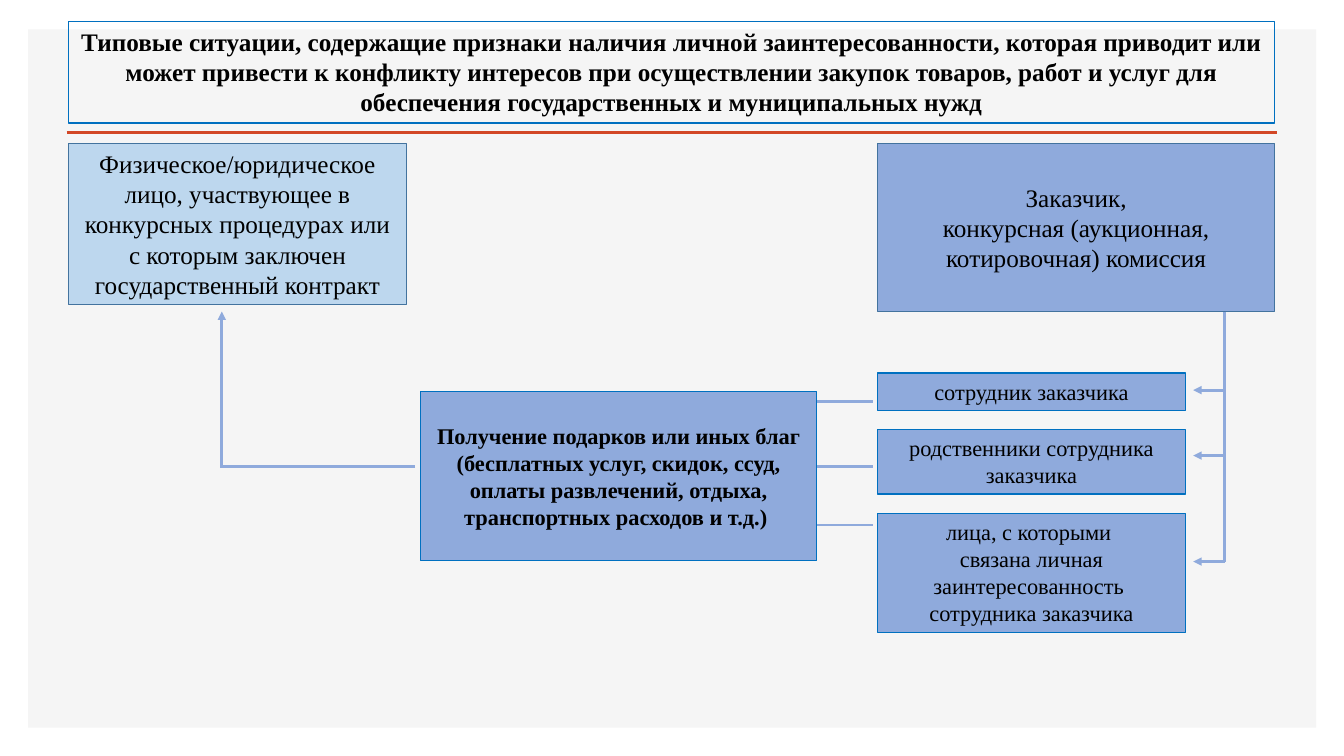
from dataclasses import dataclass
from typing import NamedTuple

from pptx import Presentation
from pptx.dml.color import RGBColor
from pptx.enum import shapes, text
from pptx.oxml import ns, xmlchemy
from pptx.util import Cm, Pt


@dataclass(frozen=True)
class Theme:
    font: str = "Times New Roman"
    heading: int = 18
    body: int = 16
    ink: str = "000000"
    panel: str = "F5F5F5"
    rule: str = "D24726"
    blue: str = "8FAADC"
    pale: str = "BDD7EE"
    edge: str = "0070C0"
    dark_edge: str = "43739E"


class Box(NamedTuple):
    """Left, top, width and height in centimetres."""
    left: float
    top: float
    width: float
    height: float

    @property
    def right(self):
        return self.left + self.width

    @property
    def bottom(self):
        return self.top + self.height

    def lengths(self):
        return [Cm(value) for value in self]


THEME = Theme()
TITLE = ("Типовые ситуации, содержащие признаки наличия личной заинтересованности, "
         "которая приводит или может привести к конфликту интересов при осуществлении "
         "закупок товаров, работ и услуг для обеспечения государственных и муниципальных нужд")
PARTICIPANT = ("Физическое/юридическое лицо, участвующее в конкурсных процедурах "
               "или с которым заключен государственный контракт")
CUSTOMER = "Заказчик,\nконкурсная (аукционная, котировочная) комиссия"
GIFTS = ("Получение подарков или иных благ (бесплатных услуг, скидок, ссуд, "
         "оплаты развлечений, отдыха, транспортных расходов и т.д.) ")
# Wording, box height, distance of the arrow from the top of the box
PEOPLE = [
    ("сотрудник заказчика", 0.94, 0.43),
    ("родственники сотрудника заказчика", 1.63, 0.66),
    ("лица, с которыми \nсвязана личная\nзаинтересованность \nсотрудника заказчика", 3.0, 1.22),
]
PEOPLE_GAP = 0.48
LINK_OFFSETS = (0.25, 1.9, 3.37)


def write(shape, wording, size, bold=False, anchor=text.MSO_ANCHOR.MIDDLE):
    frame = shape.text_frame
    frame.word_wrap = True
    frame.auto_size = text.MSO_AUTO_SIZE.NONE
    frame.vertical_anchor = anchor
    frame.text = wording
    for para in frame.paragraphs:
        para.alignment = text.PP_ALIGN.CENTER
        para.font.name = THEME.font
        para.font.size = Pt(size)
        para.font.bold = bold
        para.font.color.rgb = RGBColor.from_string(THEME.ink)


def outline(shape, color, width):
    shape.line.color.rgb = RGBColor.from_string(color)
    shape.line.width = Pt(width)


def add_block(page, box, fill, edge=None, width=0.75):
    block = page.shapes.add_shape(shapes.MSO_SHAPE.RECTANGLE, *box.lengths())
    block.shadow.inherit = False
    block.fill.solid()
    block.fill.fore_color.rgb = RGBColor.from_string(fill)
    if edge:
        outline(block, edge, width)
    else:
        block.line.fill.background()
    return block


def add_line(page, start, end, color=THEME.blue, arrow=False):
    line = page.shapes.add_connector(
        shapes.MSO_CONNECTOR.STRAIGHT, *[Cm(value) for value in (*start, *end)])
    outline(line, color, 2)
    if arrow:
        tail = xmlchemy.OxmlElement("a:tailEnd")
        tail.set("type", "triangle")
        line.line._get_or_add_ln().append(tail)
    line._element.spPr.append(xmlchemy.OxmlElement("a:effectLst"))


def add_background(page, box):
    """Grey panel, placed behind the title."""
    panel = add_block(page, box, THEME.panel)
    page.shapes.title._element.addprevious(panel._element)


def add_header(page, box):
    title = page.shapes.title
    title.left, title.top, title.width, title.height = box.lengths()
    write(title, TITLE, THEME.heading, bold=True, anchor=text.MSO_ANCHOR.TOP)
    outline(title, THEME.edge, 0.75)
    rule_y = box.bottom + 0.23
    add_line(page, (box.left - 0.05, rule_y), (box.right + 0.06, rule_y), THEME.rule)


def add_party(page, box, wording, fill):
    write(add_block(page, box, fill, THEME.dark_edge, 1), wording, THEME.heading)


def add_people(page, box, trunk_top):
    """Stack of people, each reached by an arrow from one trunk line."""
    trunk_x = box.right + 0.99
    top = box.top
    for wording, height, arrow_offset in PEOPLE:
        block = add_block(page, Box(box.left, top, box.width, height), THEME.blue, THEME.edge)
        write(block, wording, THEME.body, anchor=text.MSO_ANCHOR.TOP)
        arrow_y = top + arrow_offset
        add_line(page, (trunk_x, arrow_y), (box.right + 0.2, arrow_y), arrow=True)
        top += height + PEOPLE_GAP
    add_line(page, (trunk_x, trunk_top), (trunk_x, arrow_y))


def add_gifts(page, box, people_left, participant):
    """Benefit block, linked to the people and leading to the participant."""
    write(add_block(page, box, THEME.blue, THEME.edge), GIFTS, THEME.body, bold=True)
    for offset in LINK_OFFSETS:
        link_y = box.top + offset
        add_line(page, (people_left - 0.12, link_y), (box.right, link_y))
    turn_x = participant.left + 3.86
    turn_y = box.top + LINK_OFFSETS[1]
    add_line(page, (box.left - 0.13, turn_y), (turn_x - 0.05, turn_y))
    add_line(page, (turn_x, turn_y), (turn_x, participant.bottom + 0.18), arrow=True)


def add_conflict_slide(deck):
    page = deck.slides.add_slide(deck.slide_layouts.get_by_name("Title Only"))
    participant = Box(1.73, 3.61, 8.51, 4.06)
    customer = Box(22.12, 3.61, 10, 4.24)
    people = Box(customer.left, 9.4, 7.75, 6.53)
    add_background(page, Box(0.71, 0.74, 32.46, 17.6))
    add_header(page, Box(1.73, 0.53, 30.38, 2.57))
    add_party(page, participant, PARTICIPANT, THEME.pale)
    add_party(page, customer, CUSTOMER, THEME.blue)
    add_people(page, people, customer.bottom)
    add_gifts(page, Box(10.59, 9.86, 10, 4.27), people.left, participant)


def main():
    deck = Presentation()
    deck.slide_width, deck.slide_height = Cm(33.87), Cm(19.05)
    add_conflict_slide(deck)
    deck.save("out.pptx")


if __name__ == "__main__":
    main()
